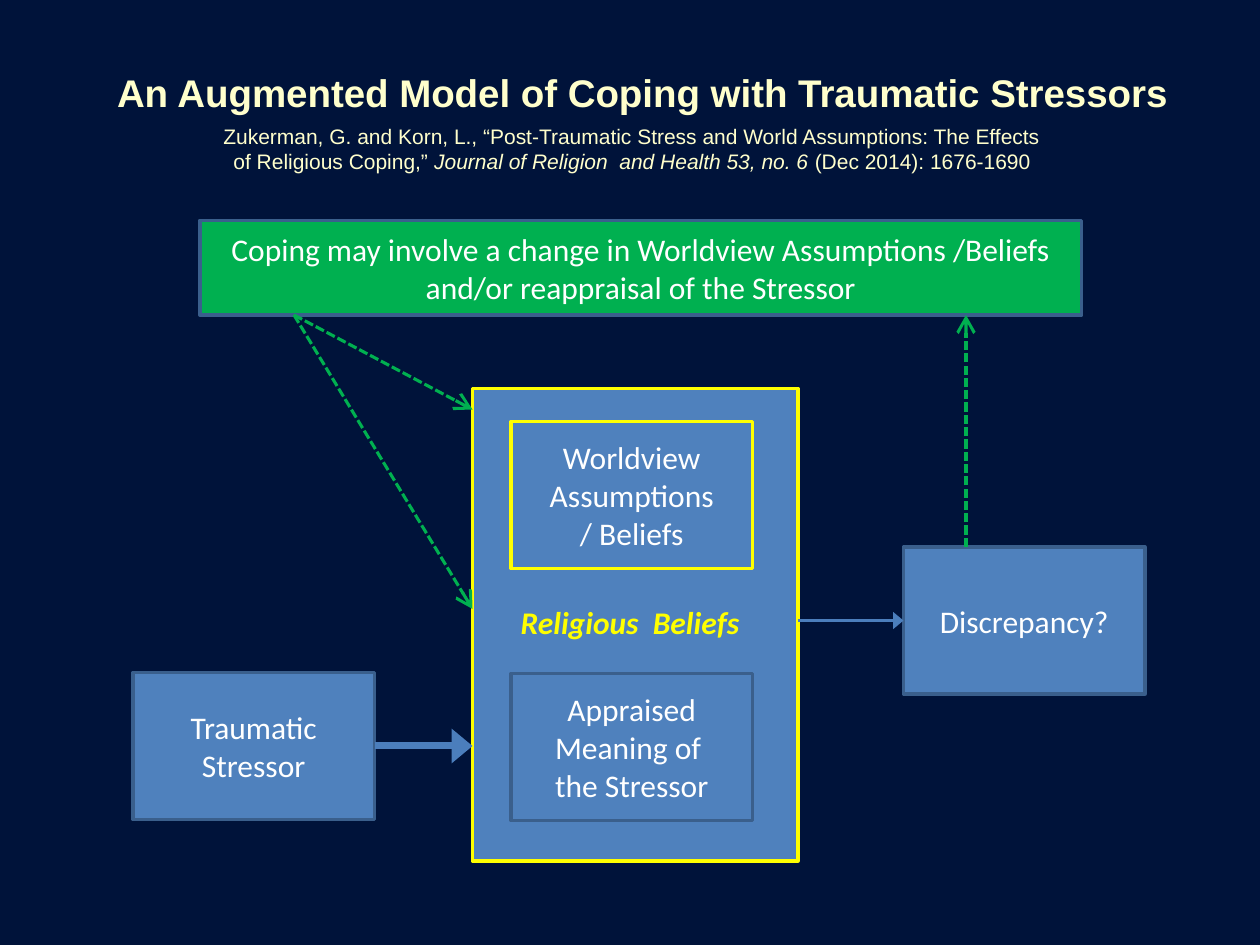
from pptx import Presentation
from pptx.util import Inches, Pt
from pptx.dml.color import RGBColor
from pptx.enum.dml import MSO_LINE
from pptx.enum.shapes import MSO_CONNECTOR, MSO_SHAPE
from pptx.enum.text import MSO_ANCHOR, PP_ALIGN
from pptx.oxml.ns import qn
from lxml.etree import SubElement

COLORS = {name: RGBColor.from_string(value) for name, value in {
    "navy": "00133A", "cream": "FFFFCC", "white": "FFFFFF", "yellow": "FFFF00",
    "blue": "4F81BD", "edge": "3A5F8C", "arrow": "4B7EBC", "green": "00B050",
}.items()}

deck = Presentation()
deck.slide_width, deck.slide_height = Inches(10), Inches(7.5)
page = deck.slides.add_slide(deck.slide_layouts[5])
page.background.fill.solid()
page.background.fill.fore_color.rgb = COLORS["navy"]

# Grid of 120 columns by 90 rows
CELL = deck.slide_width / 120


def grid(*cells):
    return [round(cell * CELL) for cell in cells]


def write(box, paragraphs, size, font, color, bold=False, anchor=MSO_ANCHOR.TOP):
    """Each paragraph is a list of (text, italic) runs."""
    frame = box.text_frame
    frame.word_wrap = True
    frame.vertical_anchor = anchor
    for index, runs in enumerate(paragraphs):
        para = frame.add_paragraph() if index else frame.paragraphs[0]
        para.alignment = PP_ALIGN.CENTER
        for text, italic in runs:
            span = para.add_run()
            span.text = text
            span.font.name, span.font.size = font, Pt(size)
            span.font.bold, span.font.italic = bold, italic
            span.font.color.rgb = COLORS[color]


# Title and citation
title = page.shapes.title
title.left, title.top, title.width, title.height = grid(8.2, 6, 106, 5.2)
write(title, [[("An Augmented Model of Coping with Traumatic Stressors", False)]],
      22, "Arial", "cream", bold=True)
citation = page.shapes.add_textbox(*grid(7.2, 11.2, 106, 6))
write(citation, [
    [("Zukerman, G. and Korn, L., “Post-Traumatic Stress and World Assumptions: The Effects", False)],
    [("of Religious Coping,” ", False),
     ("Journal of Religion  and Health 53, no. 6 ", True),
     ("(Dec 2014): 1676-1690", False)],
], 12, "Arial", "cream")

# Boxes: key, column, row, columns wide and rows high, fill, outline, lines
BOX = (23, 14)
boxes = {}
for key, column, row, (wide, high), fill, outline, lines in [
    ("panel", 45, 37, (31, 45), "blue", "yellow", []),
    ("stressor", 12.67, 64.05, BOX, "blue", "edge", ["Traumatic Stressor"]),
    ("meaning", 48.67, 64.15, BOX, "blue", "edge", ["Appraised Meaning of ", "the Stressor"]),
    ("worldview", 48.67, 40.15, BOX, "blue", "yellow", ["Worldview Assumptions", "/ Beliefs"]),
    ("discrepancy", 86.05, 52.1, BOX, "blue", "edge", ["Discrepancy?"]),
    ("coping", 19.03, 21, (84, 9), "green", "edge",
     ["Coping may involve a change in Worldview Assumptions /Beliefs "
      "and/or reappraisal of the Stressor"]),
]:
    box = page.shapes.add_shape(MSO_SHAPE.RECTANGLE, *grid(column, row, wide, high))
    box.shadow.inherit = False
    box.fill.solid()
    box.fill.fore_color.rgb = COLORS[fill]
    box.line.color.rgb = COLORS[outline]
    box.line.width = Pt(2)
    if lines:
        write(box, [[(line, False)] for line in lines], 18, "Calibri", "white",
              anchor=MSO_ANCHOR.MIDDLE)
    boxes[key] = box

# Label between the two inner boxes
label = page.shapes.add_textbox(*grid(47, 56.83, 26, 4.8))
write(label, [[("Religious  Beliefs", True)]], 18, "Calibri", "yellow", bold=True)

# Arrows: from, to, colour, width, head, head length, box at start, box at end
for start, end, color, width, head, length, source, target in [
    ((35.7, 71.05), (45, 71.05), "arrow", 4, "triangle", "med", "stressor", None),
    ((76, 59.1), (86, 59.1), "arrow", 1.75, "triangle", "med", None, "discrepancy"),
    ((92, 52.1), (92, 30), "green", 1.75, "arrow", "lg", None, None),
    ((28, 30), (45, 58), "green", 1.75, "arrow", "lg", None, None),
    ((28, 30), (45, 39), "green", 1.75, "arrow", "lg", None, None),
]:
    arrow = page.shapes.add_connector(MSO_CONNECTOR.STRAIGHT, *grid(*start, *end))
    if source:
        arrow.begin_connect(boxes[source], 3)
    if target:
        arrow.end_connect(boxes[target], 1)
    arrow.line.color.rgb = COLORS[color]
    arrow.line.width = Pt(width)
    if color == "green":
        arrow.line.dash_style = MSO_LINE.SQUARE_DOT
    SubElement(arrow.line._get_or_add_ln(), qn("a:tailEnd"), type=head, w="lg", len=length)
    SubElement(arrow._element.spPr, qn("a:effectLst"))

deck.save("out.pptx")
